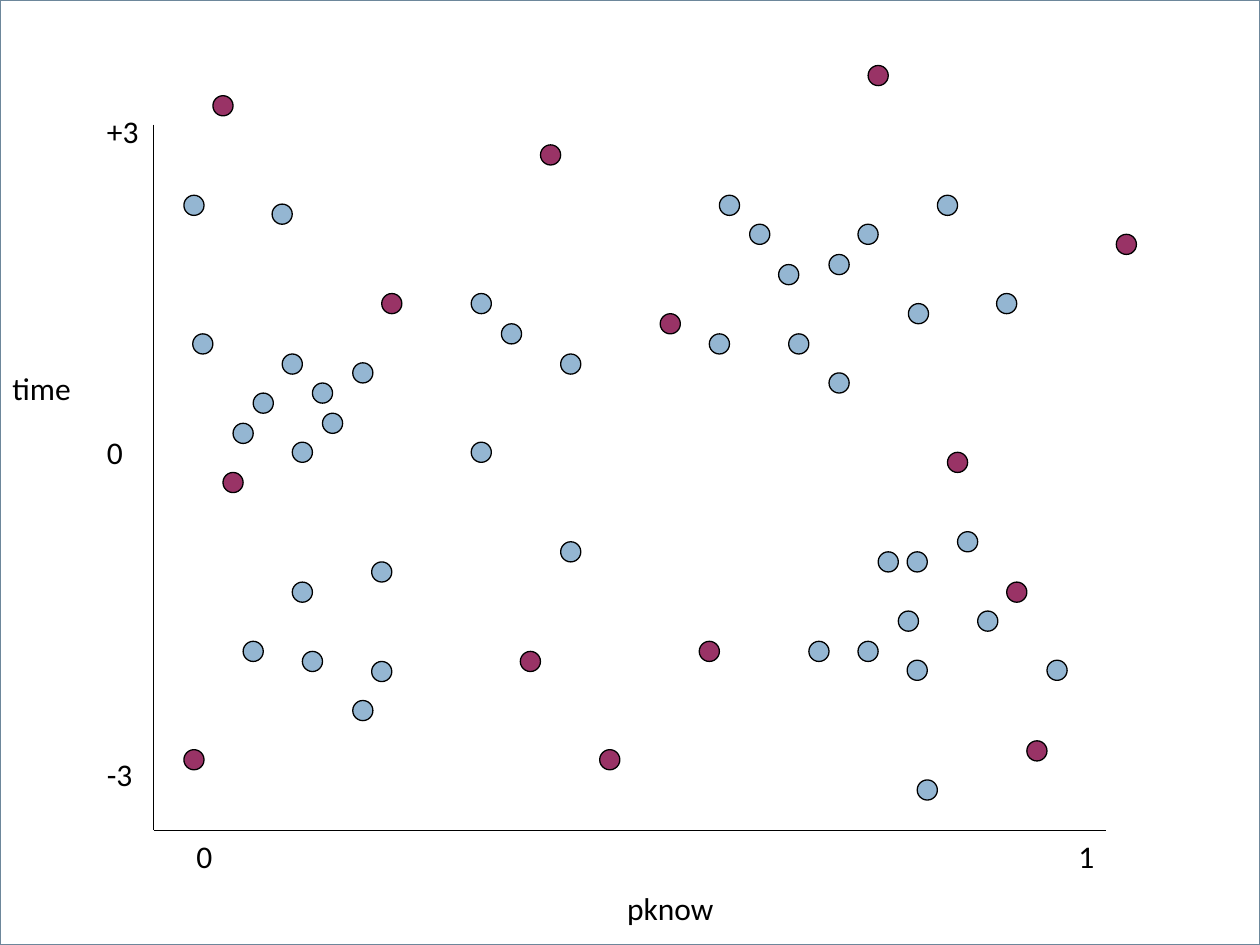
from lxml import etree
from pptx import Presentation
from pptx.dml.color import RGBColor
from pptx.enum.shapes import MSO_CONNECTOR, MSO_SHAPE
from pptx.enum.text import PP_ALIGN
from pptx.oxml.ns import qn
from pptx.util import Inches, Pt

RECT, OVAL = MSO_SHAPE.RECTANGLE, MSO_SHAPE.OVAL
STRAIGHT = MSO_CONNECTOR.STRAIGHT
LEFT, CENTER = PP_ALIGN.LEFT, PP_ALIGN.CENTER

COLORS = {"white": "FFFFFF", "black": "000000", "frame": "6D879B",
          "blue": "94B6D2", "red": "993366"}
FONT = "Calibri"
DOT = 0.16
LABEL_H = 0.4
ORIGIN_X, ORIGIN_Y = 1.22, 6.59
X_END, Y_END = 8.78, 0.99
TICK_X, TICK_TOP, TICK_STEP = 0.75, 0.84, 2.55

# Left and top of each dot, in inches
BLUE_DOTS = [
    # lower right
    (7.6, 4.22), (7.2, 5.24), (7.13, 4.85), (6.81, 5.09), (6.97, 4.38),
    (7.2, 4.38), (7.28, 6.19), (7.76, 4.85), (8.31, 5.24), (6.42, 5.09),
    # upper right
    (5.71, 1.55), (5.95, 1.78), (5.63, 2.65), (6.26, 2.65), (7.21, 2.41),
    (6.18, 2.1), (6.81, 1.78), (6.58, 2.02), (6.58, 2.96), (7.44, 1.55),
    (7.91, 2.33),
    # lower left
    (2.8, 5.56), (2.95, 5.25), (1.93, 5.09), (2.32, 4.62), (2.95, 4.46),
    (2.4, 5.17),
    # upper left
    (2.48, 3.04), (2.24, 2.81), (1.85, 3.36), (2.01, 3.12), (2.32, 3.51),
    (2.8, 2.88), (2.16, 1.62), (1.46, 1.55), (2.56, 3.28), (1.53, 2.65),
    # middle
    (3.74, 3.51), (4.45, 4.3), (4.45, 2.81), (3.74, 2.33), (3.98, 2.57),
]
RED_DOTS = [
    (8.86, 1.86), (8.15, 5.88), (6.89, 0.52), (1.46, 5.95), (1.69, 0.76),
    (4.13, 5.17), (4.29, 1.15), (4.76, 5.95), (7.52, 3.59), (5.24, 2.49),
    (1.77, 3.75), (3.03, 2.33), (7.99, 4.62), (5.55, 5.09),
]


def rgb(name):
    return RGBColor.from_string(COLORS[name])


def add_shape(slide, kind, x, y, w, h, fill, line, width):
    sp = slide.shapes.add_shape(kind, Inches(x), Inches(y), Inches(w), Inches(h))
    sp.shadow.inherit = False
    sp.fill.solid()
    sp.fill.fore_color.rgb = rgb(fill)
    sp.line.color.rgb = rgb(line)
    sp.line.width = Pt(width)


def add_dots(slide, points, color):
    for x, y in points:
        add_shape(slide, OVAL, x, y, DOT, DOT, color, "black", 0.75)


def add_axis(slide, x1, y1, x2, y2):
    line = slide.shapes.add_connector(
        STRAIGHT, Inches(x1), Inches(y1), Inches(x2), Inches(y2))
    line.line.color.rgb = rgb("black")
    line.line.width = Pt(0.75)
    etree.SubElement(line._element.spPr, qn("a:effectLst"))


def add_label(slide, text, x, y, w, align=LEFT):
    box = slide.shapes.add_textbox(Inches(x), Inches(y), Inches(w), Inches(LABEL_H))
    tf = box.text_frame
    tf.word_wrap = True
    p = tf.paragraphs[0]
    p.alignment = align
    r = p.add_run()
    r.text = text
    r.font.name = FONT
    r.font.size = Pt(18)
    r.font.color.rgb = rgb("black")


def main():
    prs = Presentation()
    prs.slide_width, prs.slide_height = Inches(10), Inches(7.5)
    slide = prs.slides.add_slide(prs.slide_layouts[6])

    add_shape(slide, RECT, 0, 0, 10, 7.5, "white", "frame", 1.5)

    add_axis(slide, ORIGIN_X, Y_END, ORIGIN_X, ORIGIN_Y)
    add_axis(slide, ORIGIN_X, ORIGIN_Y, X_END, ORIGIN_Y)
    add_label(slide, "time", 0, 2.88, 0.83)
    for i, tick in enumerate(["+3", "0", "-3"]):
        add_label(slide, tick, TICK_X, TICK_TOP + i * TICK_STEP, 0.63)
    for tick, x in [("0", 1.46), ("1", 8.46)]:
        add_label(slide, tick, x, ORIGIN_Y, 0.63)
    add_label(slide, "pknow", 1.46, 7.01, 7.72, CENTER)

    add_dots(slide, BLUE_DOTS, "blue")
    add_dots(slide, RED_DOTS, "red")

    prs.save("out.pptx")


if __name__ == "__main__":
    main()
